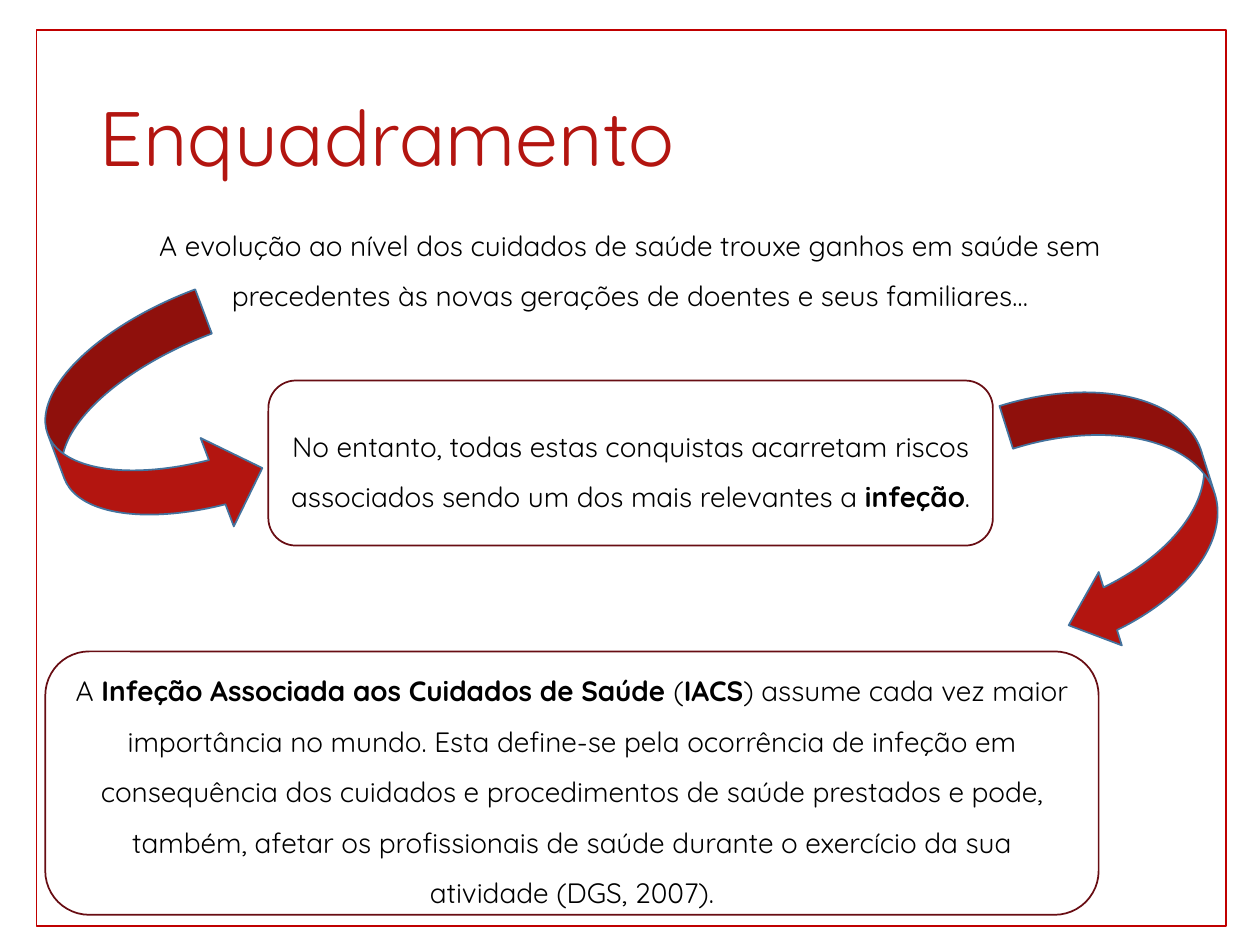
"""Builds the "Enquadramento" slide on healthcare-associated infection."""
from pptx import Presentation
from pptx.dml.color import RGBColor
from pptx.enum.shapes import MSO_SHAPE as Shape
from pptx.enum.text import MSO_ANCHOR as Anchor, PP_ALIGN as Align
from pptx.util import Inches, Pt

FONT = "Quicksand"
RED, FRAME_RED, DARK_RED = "B31510", "C00000", "680D13"
BLUE, BLACK, WHITE = "43739E", "000000", "FFFFFF"


def rgb(color):
    return RGBColor.from_string(color)


class SlideBuilder:
    def __init__(self, prs):
        self.s = prs.slides.add_slide(prs.slide_layouts[5])

    def font(self, p, size, color):
        p.font.name = FONT
        p.font.size = Pt(size)
        p.font.color.rgb = rgb(color)

    def title(self, text, x, y, w, h):
        sp = self.s.shapes.title
        sp.left, sp.top, sp.width, sp.height = map(Inches, (x, y, w, h))
        tf = sp.text_frame
        tf.text = text
        tf.vertical_anchor = Anchor.TOP
        p = tf.paragraphs[0]
        p.alignment = Align.LEFT
        p.line_spacing = 0.9
        self.font(p, 44, RED)

    def shape(self, kind, x, y, w, h, line, fill=None, rotation=0):
        sp = self.s.shapes.add_shape(kind, *map(Inches, (x, y, w, h)))
        sp.shadow.inherit = False
        sp.rotation = rotation
        if fill:
            sp.fill.solid()
            sp.fill.fore_color.rgb = rgb(fill)
        else:
            sp.fill.background()
        sp.line.color.rgb = rgb(line)
        sp.line.width = Pt(1)
        return sp

    def body(self, tf, runs):
        tf.word_wrap = True
        p = tf.paragraphs[0]
        p.alignment = Align.CENTER
        p.line_spacing = 1.5
        self.font(p, 16, BLACK)
        for text, bold in runs:
            r = p.add_run()
            r.text = text
            r.font.bold = bold

    def text(self, runs, x, y, w, h):
        sp = self.s.shapes.add_textbox(*map(Inches, (x, y, w, h)))
        self.body(sp.text_frame, runs)

    def card(self, runs, x, y, w, h, fill=None):
        sp = self.shape(Shape.ROUNDED_RECTANGLE, x, y, w, h, DARK_RED, fill)
        sp.text_frame.vertical_anchor = Anchor.MIDDLE
        self.body(sp.text_frame, runs)

    def arrow(self, kind, x, y, w, h, rotation, adjustments=()):
        sp = self.shape(kind, x, y, w, h, BLUE, RED, rotation)
        for i, value in enumerate(adjustments):
            sp.adjustments[i] = value


def main():
    prs = Presentation()
    prs.slide_width, prs.slide_height = Inches(10), Inches(7.5)
    b = SlideBuilder(prs)
    b.shape(Shape.RECTANGLE, 0.29, 0.24, 9.44, 7.11, FRAME_RED)
    b.card([
        ("No entanto, todas estas conquistas acarretam riscos associados "
         "sendo um dos mais relevantes a ", False),
        ("infeção", True),
        (".", False),
    ], 2.13, 3.02, 5.75, 1.31)
    b.text([
        ("A evolução ao nível dos cuidados de saúde trouxe ganhos em saúde sem "
         "precedentes às novas gerações de doentes e seus familiares…", False),
    ], 0.53, 1.63, 8.94, 0.91)
    b.arrow(Shape.CURVED_RIGHT_ARROW, 0.43, 2.5, 1.5, 1.89, 339.4)
    b.arrow(Shape.CURVED_LEFT_ARROW, 8.22, 2.96, 1.42, 2.13, 342.5,
            (0.25, 0.43, 0.25))
    b.card([
        ("A ", False),
        ("Infeção Associada aos Cuidados de Saúde ", True),
        ("(", False),
        ("IACS", True),
        (") assume cada vez maior importância no mundo. Esta define-se pela "
         "ocorrência de infeção em consequência dos cuidados e procedimentos "
         "de saúde prestados e pode, também, afetar os profissionais de saúde "
         "durante o exercício da sua atividade (DGS, 2007).", False),
    ], 0.36, 5.17, 8.36, 2.09, WHITE)
    b.title("Enquadramento", 0.69, 0.74, 8.62, 1.06)
    prs.save("out.pptx")


if __name__ == "__main__":
    main()
